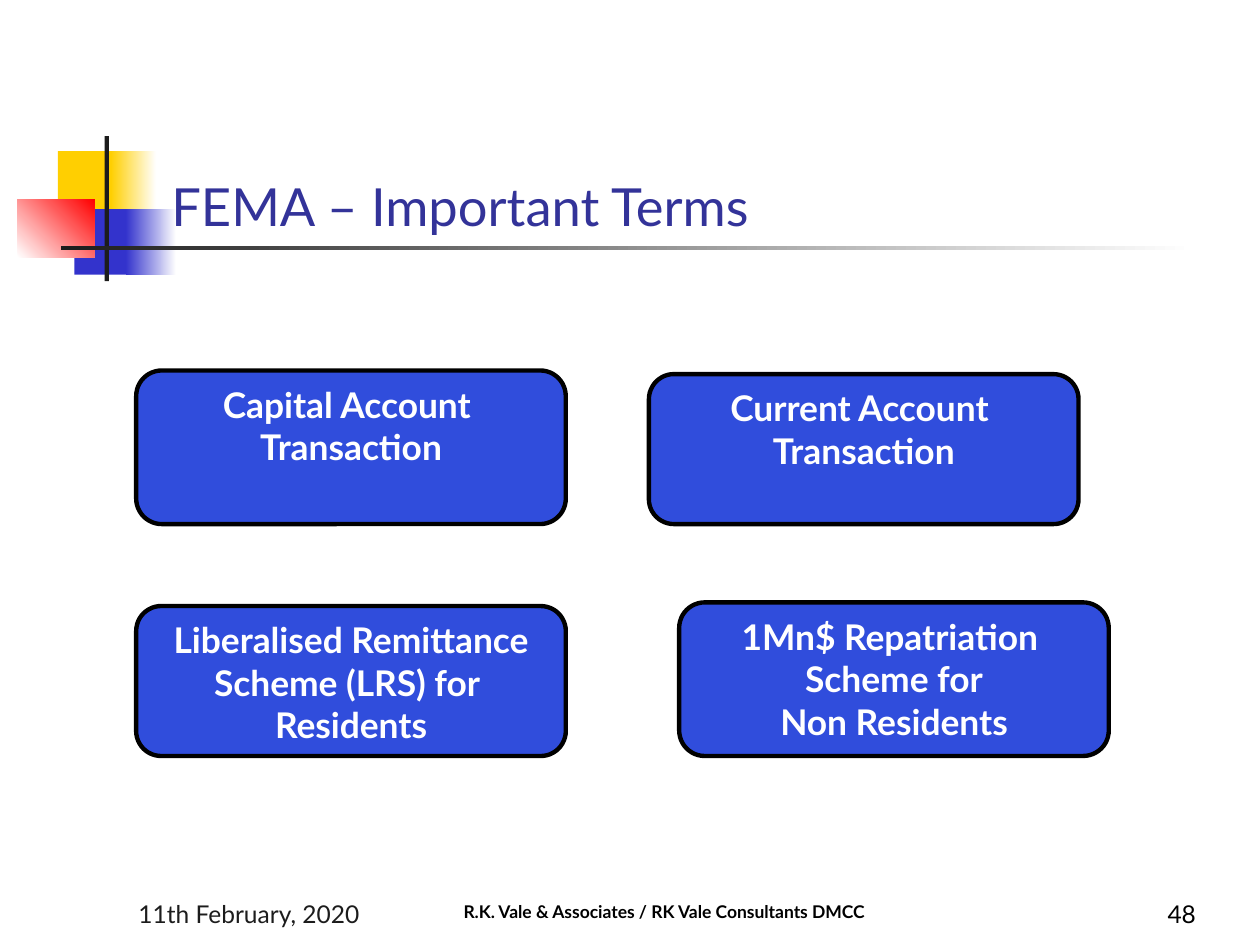
from dataclasses import dataclass

from pptx import Presentation
from pptx.dml.color import RGBColor
from pptx.enum.shapes import MSO_SHAPE
from pptx.enum.text import MSO_ANCHOR, MSO_AUTO_SIZE, PP_ALIGN
from pptx.util import Pt

RECT, ROUND = MSO_SHAPE.RECTANGLE, MSO_SHAPE.ROUNDED_RECTANGLE
TOP, BOTTOM = MSO_ANCHOR.TOP, MSO_ANCHOR.BOTTOM
LEFT, CENTER, RIGHT = PP_ALIGN.LEFT, PP_ALIGN.CENTER, PP_ALIGN.RIGHT
NO_FIT = MSO_AUTO_SIZE.NONE


@dataclass(frozen=True)
class Theme:
    """Hold the font, colours and type sizes."""

    font: str = "Lato"
    white: str = "FFFFFF"
    black: str = "000000"
    ink: str = "1C1C1C"
    gold: str = "FFCF01"
    blue: str = "3333CC"
    red: str = "FF0000"
    navy: str = "333399"
    box: str = "304DDC"
    head: float = 30
    body: float = 20.2
    note: float = 14
    foot: float = 10


class Deck:
    """Draw styled elements on the current slide."""

    def __init__(self, theme):
        """Start a deck with one title-only slide."""
        self.theme = theme
        self.file = Presentation()
        self.file.slide_width, self.file.slide_height = Pt(720), Pt(540)
        self.slide = self.file.slides.add_slide(self.file.slide_layouts[5])

    def style(self, frame, text, size, color, align=LEFT, bold=False):
        """Set the text of a frame and format its runs."""
        frame.text = text
        for para in frame.paragraphs:
            para.alignment = align
            for run in para.runs:
                font = run.font
                font.name, font.size, font.bold = self.theme.font, Pt(size), bold
                font.color.rgb = RGBColor.from_string(color)

    def shape(self, kind, area, color):
        """Add a flat shape without line or shadow."""
        shape = self.slide.shapes.add_shape(kind, *map(Pt, area))
        shape.shadow.inherit = False
        shape.line.fill.background()
        shape.fill.solid()
        shape.fill.fore_color.rgb = RGBColor.from_string(color)
        return shape

    def fade(self, area, start, end, angle=0):
        """Add a rectangle with a two-colour gradient."""
        fill = self.shape(RECT, area, start).fill
        fill.gradient()
        fill.gradient_angle = angle
        for stop, place, color in zip(fill.gradient_stops, (0, 1), (start, end)):
            stop.position = place
            stop.color.rgb = RGBColor.from_string(color)

    def title(self, area, text):
        """Place the title in front of what is drawn so far."""
        title = self.slide.shapes.title
        title.left, title.top, title.width, title.height = map(Pt, area)
        frame = title.text_frame
        frame.auto_size, frame.vertical_anchor = NO_FIT, BOTTOM
        self.style(frame, text, self.theme.head, self.theme.navy)
        title.element.getparent().append(title.element)

    def card(self, area, text):
        """Add a rounded box with centred bold text."""
        card = self.shape(ROUND, area, self.theme.box)
        card.line.color.rgb = RGBColor.from_string(self.theme.black)
        card.line.width = Pt(2.5)
        frame = card.text_frame
        frame.word_wrap, frame.vertical_anchor = False, TOP
        frame.margin_left = frame.margin_right = Pt(5)
        frame.margin_top = frame.margin_bottom = Pt(2.9)
        self.style(frame, text, self.theme.body, self.theme.white, CENTER, True)

    def label(self, area, text, size, color, align=LEFT, anchor=BOTTOM, bold=False):
        """Add a wrapping text box."""
        frame = self.slide.shapes.add_textbox(*map(Pt, area)).text_frame
        frame.word_wrap, frame.vertical_anchor = True, anchor
        self.style(frame, text, size, color, align, bold)


def main():
    """Build and save the slide."""
    theme = Theme()
    deck = Deck(theme)

    deck.shape(RECT, (33.1, 86.4, 34.6, 37.4), theme.gold)
    deck.fade((63.4, 86.4, 25.9, 37.4), theme.gold, theme.white)
    deck.shape(RECT, (42.5, 119.5, 33.1, 37.4), theme.blue)
    deck.fade((72, 119.5, 28.8, 37.4), theme.blue, theme.white)
    deck.fade((10.1, 113.8, 43.9, 33.1), theme.white, theme.red, 45)
    deck.shape(RECT, (59.8, 77.8, 2.5, 82.8), theme.ink)
    deck.fade((34.6, 140.4, 648, 2.5), theme.ink, theme.white)
    deck.title((90.7, 49, 613.4, 90), "FEMA – Important Terms")

    wide, tall, low = 245.5, 87.8, 85.7
    upper, lower = 299.5, 432
    cards = (
        (77.8, upper, tall, "Capital Account \nTransaction"),
        (370.8, upper, low, "Current Account \nTransaction"),
        (77.8, lower, low, "Liberalised Remittance\nScheme (LRS) for \nResidents"),
        (388.1, lower, tall, "1Mn$ Repatriation \nScheme for\nNon Residents"),
    )
    for left, base, height, text in cards:
        deck.card((left, base - height, wide, height), text)

    deck.label((72, 498.2, 149.8, 36), "11th February, 2020", theme.note, theme.ink)
    deck.label((257.8, 511.2, 360, 19.4),
               "R.K. Vale & Associates / RK Vale Consultants DMCC",
               theme.foot, theme.black, anchor=TOP, bold=True)
    deck.label((540.7, 506.9, 149.8, 27.4), "48", theme.note, theme.black, RIGHT)
    deck.file.save("out.pptx")


if __name__ == "__main__":
    main()
